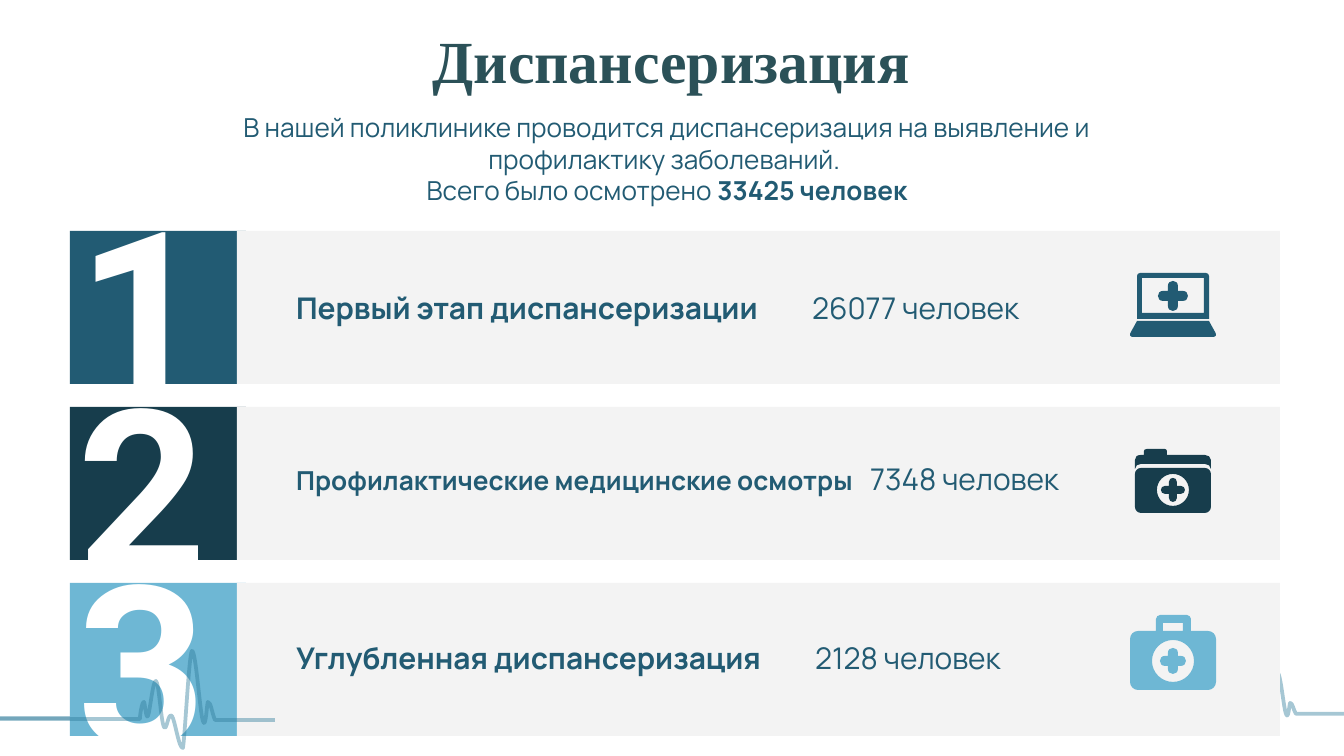
from lxml import etree
from pptx import Presentation
from pptx import util as u
from pptx.dml.color import RGBColor
from pptx.enum import shapes, text
from pptx.oxml import ns

PX = 9144000 / 1344
TEAL, NAVY, SKY = "225B73", "173D4C", "6EB7D4"
PANEL, PULSE_COLOR = "F3F3F3", "2D7A99"
ROW_TOP, ROW_HEIGHT, ROW_PITCH = 231, 153, 176

# Tile colour, number top, label, its size, count, tab position, label top and width
ROWS = [
    (TEAL, 196, "Первый этап диспансеризации", 16, "26077 человек", 516, 283, 770),
    (NAVY, 374, "Профилактические медицинские осмотры", 14, "7348 человек", 574, 454, 801),
    (SKY, 550, "Углубленная диспансеризация", 16, "2128 человек", 519, 633, 746),
]

# Outlines: two numbers are a point, six numbers are a Bezier curve
PULSE_SIZE = (349, 99)
PULSE = [
    (349, 70), (289, 70), (286, 63, 285, 52, 282, 52),
    (281, 52, 280, 81, 277, 71), (274, 63, 270, 0, 266, 1),
    (263, 5, 259, 87, 257, 98), (253, 99, 249, 70, 246, 66),
    (242, 62, 241, 82, 238, 77), (235, 71, 233, 32, 230, 31),
    (227, 30, 224, 62, 222, 66), (220, 70, 219, 52, 218, 52),
    (216, 52, 214, 65, 214, 69), (54, 69), (52, 71, 48, 78, 47, 77),
    (44, 75, 44, 60, 43, 59), (40, 59, 39, 73, 38, 74),
    (36, 73, 40, 70, 34, 69), (23, 69, 5, 73, 0, 69),
]
LAPTOP_BASE = [
    (1137, 321), (1131, 332), (1129, 335, 1130, 337, 1133, 337),
    (1213, 337), (1216, 337, 1217, 335, 1215, 332), (1209, 321),
]
FOLDER_TAB = [
    (1147, 449), (1145, 449, 1144, 450, 1144, 451), (1144, 455), (1141, 455),
    (1137, 455, 1135, 457, 1135, 460), (1135, 469),
    (1135, 466, 1138, 464, 1141, 464), (1205, 464),
    (1208, 464, 1211, 466, 1211, 469), (1211, 460),
    (1211, 457, 1208, 455, 1205, 455), (1167, 455), (1167, 451),
    (1167, 450, 1166, 449, 1165, 449),
]
CASE_HANDLE = [
    (1156, 631), (1156, 619), (1156, 617, 1158, 615, 1160, 615),
    (1187, 615), (1189, 615, 1191, 617, 1191, 619), (1191, 631),
]


def px(value):
    return u.Emu(round(value * PX))


def color(hex_string):
    return RGBColor.from_string(hex_string)


def rectangle(left, top, right, bottom):
    return [(left, top), (right, top), (right, bottom), (left, bottom)]


def rounded(left, top, right, bottom, top_radius, bottom_radius=0):
    """Outline of a rectangle, clockwise from its top left corner."""
    a, b = top_radius, bottom_radius
    c, d = a * 0.45, b * 0.45
    outline = [
        (left + a, top), (right - a, top),
        (right - c, top, right, top + c, right, top + a), (right, bottom - b),
    ]
    if b:
        outline += [
            (right, bottom - d, right - d, bottom, right - b, bottom), (left + b, bottom),
            (left + d, bottom, left, bottom - d, left, bottom - b),
        ]
    else:
        outline.append((left, bottom))
    return outline + [(left, top + a), (left, top + c, left + c, top, left + a, top)]


def circle(x, y, r):
    k = r * 0.55
    return [
        (x, y - r), (x + k, y - r, x + r, y - k, x + r, y),
        (x + r, y + k, x + k, y + r, x, y + r),
        (x - k, y + r, x - r, y + k, x - r, y),
        (x - r, y - k, x - k, y - r, x, y - r),
    ]


def plus(x, y, half, arm):
    """Outline of a plus whose four arms have round ends."""
    end, control = arm - half, -half - arm / 3
    outline = []
    quarter = [(-arm, -arm), (-arm, end), (-arm, control, arm, control, arm, end)]
    for _ in range(4):
        for item in quarter:
            outline.append(tuple(v + (y if i % 2 else x) for i, v in enumerate(item)))
        quarter = [
            tuple(v for i in range(0, len(item), 2) for v in (-item[i + 1], item[i]))
            for item in quarter
        ]
    return outline


def add_freeform(slide, *outlines, close=True):
    """Build the outlines from their points, then join each curve's three points."""
    builder, segments = None, []
    for start, *rest in outlines:
        start = [px(v) for v in start]
        if builder is None:
            builder = slide.shapes.build_freeform(*start, scale=1.0)
        else:
            builder.move_to(*start)
        points = [(px(item[i]), px(item[i + 1]))
                  for item in rest for i in range(0, len(item), 2)]
        builder.add_line_segments(points, close=close)
        segments += rest
    shape = builder.convert_to_shape()
    shape.shadow.inherit = False
    lines = iter(list(shape._element.iter(ns.qn("a:lnTo"))))
    for item in segments:
        first, *others = [next(lines) for _ in range(len(item) // 2)]
        if others:
            first.tag = ns.qn("a:cubicBezTo")
        for line in others:
            first.append(line[0])
            line.getparent().remove(line)
    return shape


def paint(shape, fill):
    shape.fill.solid()
    shape.fill.fore_color.rgb = color(fill)
    shape.line.fill.background()


def add_pulse(slide, left, top, width, height):
    scale_x, scale_y = width / PULSE_SIZE[0], height / PULSE_SIZE[1]
    outline = [
        tuple(top + v * scale_y if i % 2 else left + v * scale_x for i, v in enumerate(item))
        for item in PULSE
    ]
    shape = add_freeform(slide, outline, close=False)
    shape.fill.background()
    shape.line.width = u.Pt(2)
    shape.line.color.rgb = color(PULSE_COLOR)
    rgb = shape.line._ln.find(".//" + ns.qn("a:srgbClr"))
    etree.SubElement(rgb, ns.qn("a:alpha")).set("val", "41000")


def add_rectangle(slide, left, top, width, height, fill):
    shape = slide.shapes.add_shape(
        shapes.MSO_SHAPE.RECTANGLE, px(left), px(top), px(width), px(height))
    shape.shadow.inherit = False
    paint(shape, fill)


def add_run(paragraph, content, size=14, font="Manrope", fill=TEAL, bold=False):
    run = paragraph.add_run()
    run.text = content
    run.font.size, run.font.name, run.font.bold = u.Pt(size), font, bold
    run.font.color.rgb = color(fill)


def add_text_box(slide, left, top, width, height):
    frame = slide.shapes.add_textbox(px(left), px(top), px(width), px(height)).text_frame
    frame.word_wrap = True
    return frame


def add_title(slide):
    title = slide.shapes.title
    title.left, title.top, title.width, title.height = px(105), px(10), px(1133), px(85)
    frame = title.text_frame
    frame.auto_size = text.MSO_AUTO_SIZE.NONE
    frame.vertical_anchor = text.MSO_ANCHOR.TOP
    frame.margin_top = frame.margin_bottom = u.Inches(0.1)
    paragraph = frame.paragraphs[0]
    paragraph.alignment = text.PP_ALIGN.CENTER
    add_run(paragraph, "Диспансеризация", size=32, font="Times New Roman",
            fill="2B5158", bold=True)


def add_intro(slide):
    frame = add_text_box(slide, 189, 105, 956, 109)
    first, second = frame.paragraphs[0], frame.add_paragraph()
    first.alignment = second.alignment = text.PP_ALIGN.CENTER
    add_run(first, "В нашей поликлинике проводится диспансеризация на выявление и "
                   "профилактику заболеваний. ")
    add_run(second, "Всего было осмотрено ")
    add_run(second, "33425 человек", bold=True)


def add_number(slide, number, top):
    frame = add_text_box(slide, 64, top, 145, 215)
    frame.vertical_anchor = text.MSO_ANCHOR.MIDDLE
    frame.margin_top = frame.margin_bottom = u.Inches(0.1)
    frame.paragraphs[0].alignment = text.PP_ALIGN.CENTER
    add_run(frame.paragraphs[0], str(number), size=121, font="Roboto",
            fill="FFFFFF", bold=True)


def add_label(slide, label, size, count, tab, top, width):
    paragraph = add_text_box(slide, 283, top, width, 50).paragraphs[0]
    tabs = etree.SubElement(paragraph._p.get_or_add_pPr(), ns.qn("a:tabLst"))
    etree.SubElement(tabs, ns.qn("a:tab"), pos=str(px(tab)), algn="l")
    add_run(paragraph, label + "\t", size=size, bold=True)
    add_run(paragraph, count, size=16)


def add_icons(slide):
    case = rounded(1130, 631, 1216, 690, 8, 8)
    case[1:1] = CASE_HANDLE
    for fill, *outlines in [
        (TEAL, plus(1173, 296, 15, 5)),
        (TEAL, LAPTOP_BASE),
        (TEAL, rounded(1137, 273, 1209, 319, 3), rectangle(1142, 278, 1204, 313)),
        (NAVY, FOLDER_TAB),
        (NAVY, rounded(1135, 468, 1211, 513, 6, 6), circle(1173, 490, 16)),
        (NAVY, plus(1173, 490, 12, 4)),
        (SKY, case, rectangle(1163, 623, 1183, 631), circle(1173, 661, 21)),
        (SKY, plus(1173, 661, 13, 5)),
    ]:
        paint(add_freeform(slide, *outlines), fill)


def main():
    presentation = Presentation()
    presentation.slide_width, presentation.slide_height = px(1344), px(756)
    slide = presentation.slides.add_slide(presentation.slide_layouts[5])
    add_pulse(slide, 1064, 672, 280, 59)
    add_pulse(slide, -87, 677, 280, 59)
    add_title(slide)
    add_intro(slide)
    for index, (fill, number_top, *_) in enumerate(ROWS):
        top = ROW_TOP + index * ROW_PITCH
        add_rectangle(slide, 70, top, 176, ROW_HEIGHT, fill)
        add_rectangle(slide, 237, top, 1043, ROW_HEIGHT, PANEL)
        add_number(slide, index + 1, number_top)
    add_icons(slide)
    add_pulse(slide, -74, 650, *PULSE_SIZE)
    for _, _, *label in ROWS:
        add_label(slide, *label)
    presentation.save("out.pptx")


if __name__ == "__main__":
    main()
